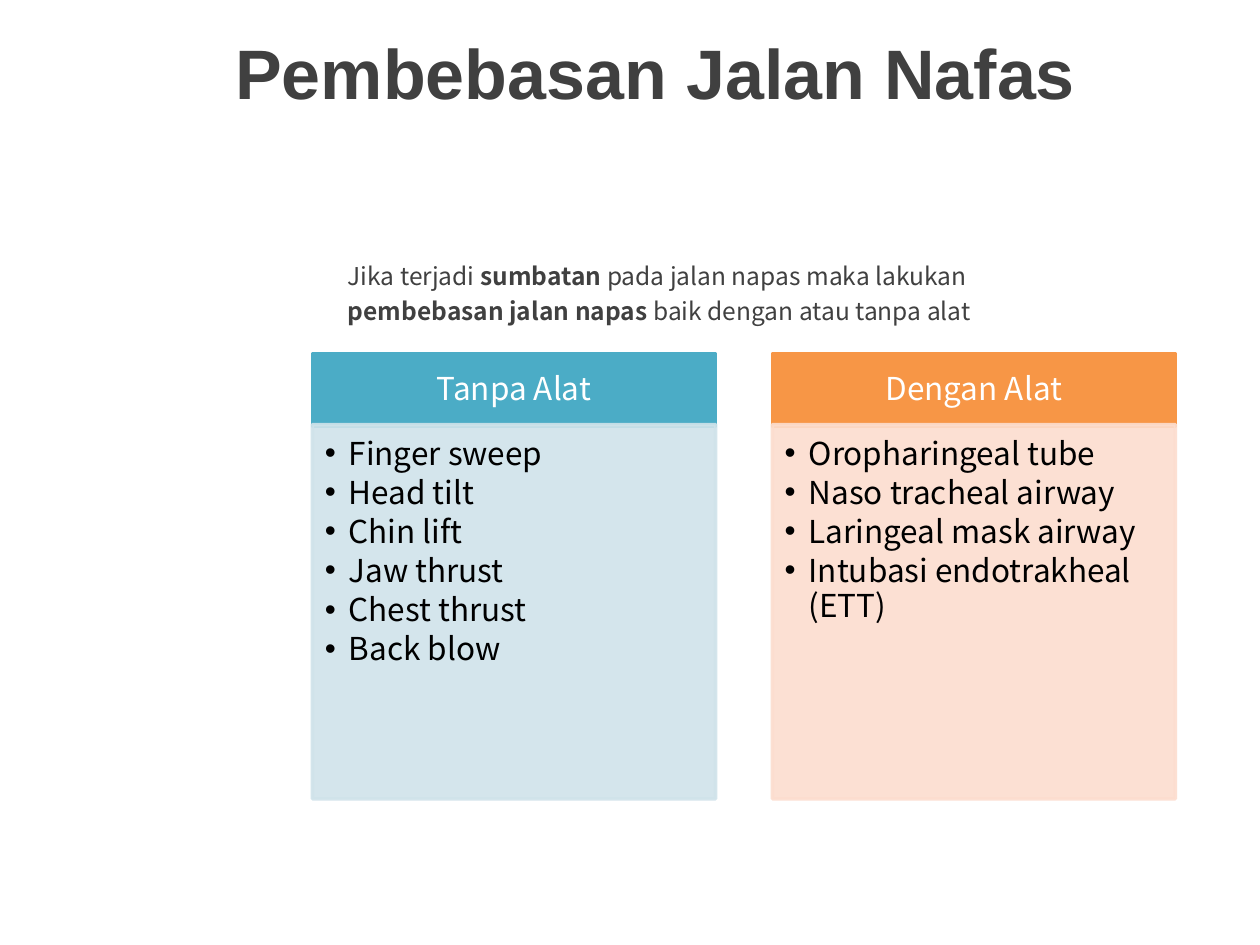
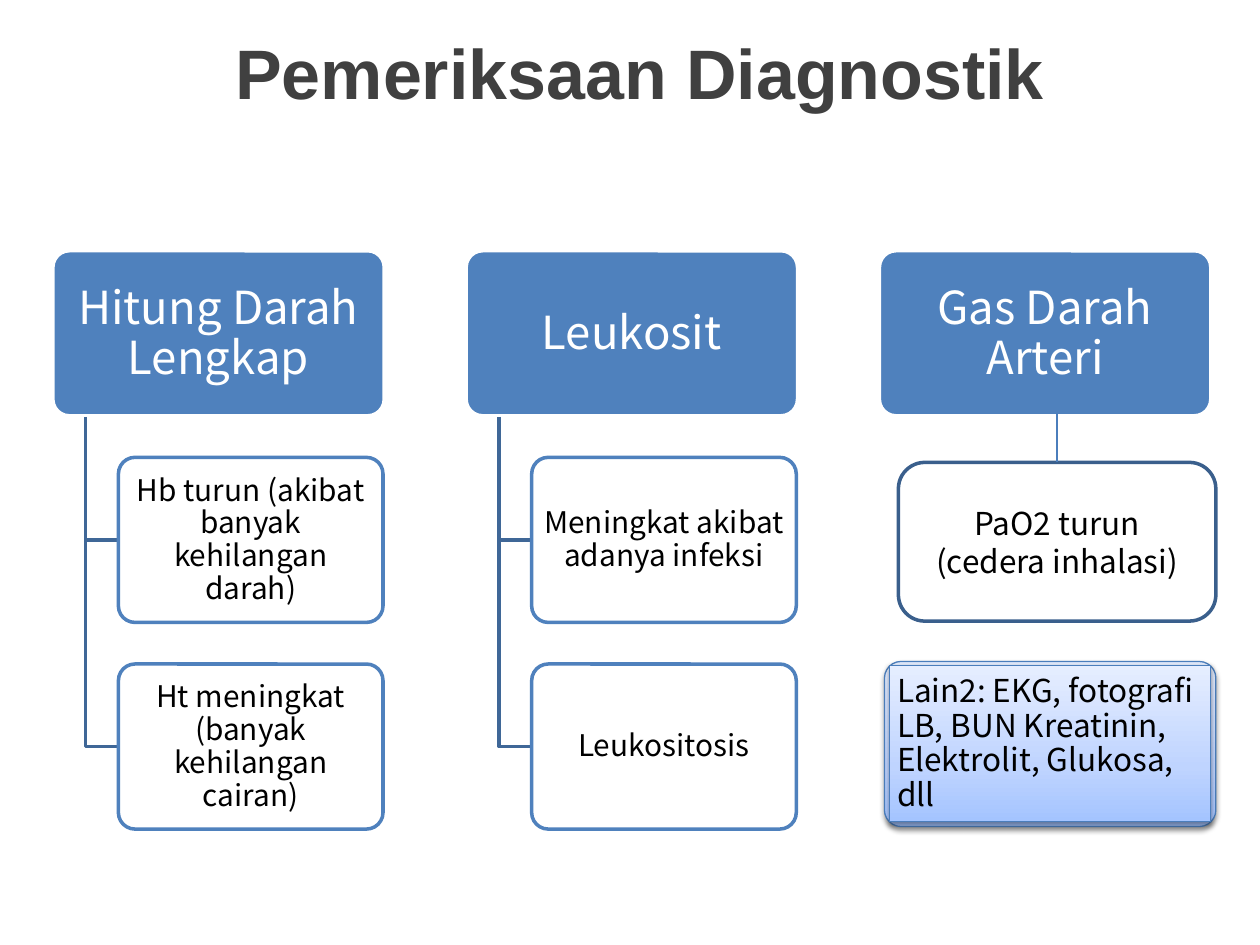
import pptx
import pptx.util
import pptx.dml.color
import pptx.enum.shapes
import pptx.enum.text
from lxml import etree
from pptx.oxml.ns import qn

Inches = pptx.util.Inches
Pt = pptx.util.Pt
RGBColor = pptx.dml.color.RGBColor
SHAPE = pptx.enum.shapes.MSO_SHAPE
ANCHOR = pptx.enum.text.MSO_ANCHOR
ALIGN = pptx.enum.text.PP_ALIGN

# Content
AIRWAY_TITLE = "Pembebasan Jalan Nafas"
INTRO = [
    [("Jika terjadi ", False), ("sumbatan ", True), ("pada jalan napas maka lakukan", False)],
    [("pembebasan jalan napas ", True), ("baik dengan atau tanpa alat", False)],
]
AIRWAY_METHODS = [
    ("Tanpa Alat", ["Finger sweep", "Head tilt", "Chin lift", "Jaw thrust",
                    "Chest thrust", "Back blow"]),
    ("Dengan Alat", ["Oropharingeal tube", "Naso tracheal airway",
                     "Laringeal mask airway", "Intubasi endotrakheal (ETT)"]),
]
DIAGNOSTIC_TITLE = "Pemeriksaan Diagnostik"
TESTS = [
    ("Hitung Darah Lengkap", ["Hb turun (akibat banyak kehilangan darah)",
                              "Ht meningkat (banyak kehilangan cairan)"]),
    ("Leukosit", ["Meningkat akibat adanya infeksi", "Leukositosis"]),
    ("Gas Darah Arteri", []),
]
BLOOD_GAS_RESULT = ["PaO2 turun", "(cedera inhalasi)"]
OTHER_TESTS = "Lain2: EKG, fotografi LB, BUN Kreatinin, Elektrolit, Glukosa, dll"

# Style
TITLE_FONT, BODY_FONT = "Arial", "Noto Sans CJK KR"
WHITE = RGBColor(0xFF, 0xFF, 0xFF)
BLACK = RGBColor(0, 0, 0)
DARK_GREY = RGBColor(0x40, 0x40, 0x40)
BLUE = RGBColor(0x4F, 0x81, 0xBD)
ELBOW_BLUE = RGBColor(0x3F, 0x67, 0x97)
RESULT_BLUE = RGBColor(0x3A, 0x5F, 0x8C)
THIN_BLUE = RGBColor(0x4B, 0x7E, 0xBC)
METHOD_COLORS = [
    (RGBColor(0x4B, 0xAC, 0xC6), RGBColor(0xD0, 0xE3, 0xEA)),
    (RGBColor(0xF7, 0x96, 0x46), RGBColor(0xFC, 0xDD, 0xCF)),
]
GRADIENT = [(0, "A4C4FF"), (35, "BFD4FF"), (100, "E6EEFF")]
SINGLE, TIGHT = 1.22, 1.1  # line pitch as a multiple of the text size


def add_element(parent, tag, **attributes):
    return etree.SubElement(parent, qn(tag), attributes)


def set_alpha(color_parent, percent):
    for color in color_parent.iter(qn("a:srgbClr")):
        add_element(color, "a:alpha", val=str(percent * 1000))


def add_block(page, kind, at, fill, line, width=2, corner=None, alpha=None):
    box = page.shapes.add_shape(kind, *map(Inches, at))
    box.shadow.inherit = False
    if corner is not None:
        box.adjustments[0] = corner
    if fill is not None:
        box.fill.solid()
        box.fill.fore_color.rgb = fill
        if alpha:
            set_alpha(box.element.spPr.find(qn("a:solidFill")), alpha)
    box.line.color.rgb = line
    box.line.width = Pt(width)
    return box


def write(box, paragraphs, size, color, align=ALIGN.CENTER, anchor=ANCHOR.MIDDLE,
          insets=(0.1, 0.05, 0.1, 0.05), pitch=TIGHT, gap=0, bullets=False, font=BODY_FONT):
    """Fill a box with paragraphs, each a string or a list of (text, bold) runs."""
    frame = box.text_frame
    frame.word_wrap = True
    frame.vertical_anchor = anchor
    (frame.margin_left, frame.margin_top,
     frame.margin_right, frame.margin_bottom) = map(Inches, insets)
    for index, runs in enumerate(paragraphs):
        para = frame.add_paragraph() if index else frame.paragraphs[0]
        para.alignment = align
        para.line_spacing = Pt(size * pitch)
        if index:
            para.space_before = Pt(gap)
        if bullets:
            properties = para._p.get_or_add_pPr()
            properties.set("marL", str(Inches(0.19)))
            properties.set("indent", str(-Inches(0.19)))
            add_element(properties, "a:buFont", typeface="Arial")
            add_element(properties, "a:buChar", char="•")
        for text, bold in [(runs, False)] if isinstance(runs, str) else runs:
            span = para.add_run()
            span.text = text
            span.font.name = font
            span.font.size = Pt(size)
            span.font.bold = bold
            span.font.color.rgb = color


def add_page(deck, title):
    page = deck.slides.add_slide(deck.slide_layouts[6])
    box = page.shapes.add_textbox(*map(Inches, (1.77, 0, 8.23, 1.17)))
    write(box, [[(title, True)]], 40, DARK_GREY, ALIGN.LEFT, pitch=1.15, font=TITLE_FONT)
    return page


def add_elbow(page, left, top, right, bottom):
    points = [(Inches(x), Inches(y)) for x, y in ((left, bottom), (right, bottom))]
    builder = page.shapes.build_freeform(Inches(left), Inches(top))
    builder.add_line_segments(points, close=False)
    elbow = builder.convert_to_shape()
    elbow.shadow.inherit = False
    elbow.fill.background()
    elbow.line.color.rgb = ELBOW_BLUE
    elbow.line.width = Pt(2)


def add_gradient_block(page, kind, at, corner=None):
    """Add a block with a vertical blue gradient and a soft shadow below it."""
    box = add_block(page, kind, at, None, THIN_BLUE, 0.75, corner)
    box.fill.gradient()
    box.fill.gradient_angle = 90
    properties = box.element.spPr
    stops = properties.find(".//" + qn("a:gsLst"))
    stops.clear()
    for position, color in GRADIENT:
        stop = add_element(stops, "a:gs", pos=str(position * 1000))
        add_element(stop, "a:srgbClr", val=color)
    shadow = add_element(properties.find(qn("a:effectLst")), "a:outerShdw",
                         blurRad=str(Pt(3.1)), dist=str(Pt(1.6)), dir="5400000",
                         rotWithShape="0")
    add_element(shadow, "a:srgbClr", val="000000")
    set_alpha(shadow, 38)
    return box


def build_airway_page(deck):
    page = add_page(deck, AIRWAY_TITLE)
    intro = page.shapes.add_textbox(*map(Inches, (2.33, 2.02, 7.18, 0.75)))
    write(intro, INTRO, 14, DARK_GREY, ALIGN.LEFT, ANCHOR.TOP,
          (0.43, 0.05, 0.1, 0.05), SINGLE, gap=2.8)
    for column, (heading, methods) in enumerate(AIRWAY_METHODS):
        left = 2.48 + 3.65 * column
        strong, pale = METHOD_COLORS[column]
        header = add_block(page, SHAPE.RECTANGLE, (left, 2.81, 3.2, 0.57), strong, strong)
        write(header, [heading], 18, WHITE, insets=(0.14, 0.08, 0.14, 0.08))
        panel = add_block(page, SHAPE.RECTANGLE, (left, 3.37, 3.2, 2.97), pale, pale, alpha=90)
        set_alpha(panel.element.spPr.find(qn("a:ln")), 90)
        write(panel, methods, 18, BLACK, ALIGN.LEFT, ANCHOR.TOP,
              (0.1, 0.1, 0.14, 0.16), gap=2.5, bullets=True)


def build_diagnostic_page(deck):
    page = add_page(deck, DIAGNOSTIC_TITLE)
    top, height = 1.99, 1.31
    for column, (test, findings) in enumerate(TESTS):
        left = 0.42 + 3.28 * column
        header = add_block(page, SHAPE.ROUNDED_RECTANGLE, (left, top, 2.63, height),
                           BLUE, WHITE, corner=0.1)
        write(header, [test], 26, WHITE, insets=(0.05, 0.04, 0.05, 0.04))
        for row, finding in enumerate(findings, 1):
            child_left, child_top = left + 0.52, top + 1.64 * row
            add_elbow(page, left + 0.26, top + height + 0.01,
                      child_left, child_top + height / 2)
            child = add_block(page, SHAPE.ROUNDED_RECTANGLE,
                              (child_left, child_top, 2.1, height),
                              WHITE, BLUE, corner=0.1, alpha=90)
            write(child, [finding], 17, BLACK, insets=(0.04, 0.02, 0.04, 0.02))

    result = add_block(page, SHAPE.ROUNDED_RECTANGLE, (7.13, 3.67, 2.52, 1.26),
                       WHITE, RESULT_BLUE)
    write(result, BLOOD_GAS_RESULT, 18, BLACK, pitch=SINGLE)
    link = page.shapes.add_connector(pptx.enum.shapes.MSO_CONNECTOR.STRAIGHT,
                                     *map(Inches, (8.39, 3.28, 8.39, 3.67)))
    link.end_connect(result, 0)
    link.line.color.rgb = THIN_BLUE
    link.line.width = Pt(0.75)
    add_element(link._element.spPr, "a:effectLst")

    add_gradient_block(page, SHAPE.ROUNDED_RECTANGLE, (7.02, 5.25, 2.63, height), 0.1)
    others = add_gradient_block(page, SHAPE.RECTANGLE, (7.06, 5.28, 2.55, 1.24))
    write(others, [OTHER_TESTS], 18, BLACK, ALIGN.LEFT, insets=(0.06, 0.04, 0.06, 0.04))


def main():
    deck = pptx.Presentation()
    deck.slide_width, deck.slide_height = Inches(10), Inches(7.5)
    build_airway_page(deck)
    build_diagnostic_page(deck)
    deck.save("out.pptx")


if __name__ == "__main__":
    main()
